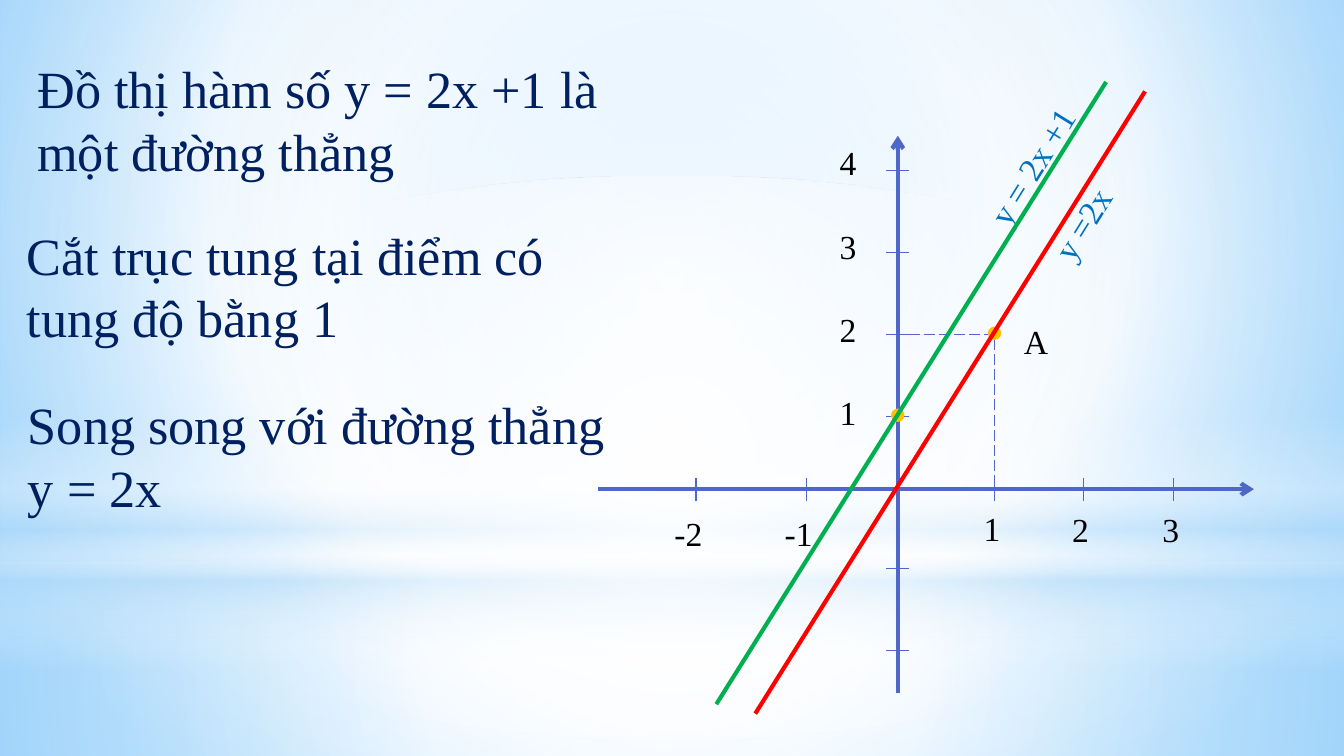
"""Build a slide on the graph of y = 2x + 1 beside its parallel y = 2x."""
from dataclasses import dataclass

from lxml.etree import SubElement
from pptx import Presentation
from pptx.dml.color import RGBColor
from pptx.enum.dml import MSO_LINE_DASH_STYLE as Dash
from pptx.enum.shapes import MSO_CONNECTOR as Connector, MSO_SHAPE as Preset
from pptx.enum.text import MSO_AUTO_SIZE as AutoSize
from pptx.oxml.ns import qn
from pptx.util import Inches, Pt


@dataclass(frozen=True)
class Theme:
    font: str = "Times New Roman"
    statement_size: int = 28
    label_size: int = 18
    navy: str = "002060"
    black: str = "000000"
    blue: str = "0070C0"
    axis: str = "4E67C8"
    point: str = "FFC000"
    red: str = "FF0000"
    green: str = "00B050"
    white: str = "FFFFFF"
    haze: str = "B4DCFA"
    sky: str = "9ED5FF"
    deep_sky: str = "5BB9FF"
    thick: float = 2.25
    thin: float = 0.75


@dataclass(frozen=True)
class Gradient:
    """Stops are (position, colour, opacity), all in percent; no focus means downwards."""
    stops: tuple
    focus: tuple | None = None


@dataclass(frozen=True)
class Layer:
    preset: Preset
    top: float
    height: float
    gradient: Gradient


@dataclass(frozen=True)
class Label:
    text: str
    left: float
    top: float
    width: float
    height: float = 0.43
    color: str = Theme.black
    size: int = Theme.label_size
    rotation: float = 0


@dataclass(frozen=True)
class Segment:
    start: tuple
    end: tuple
    color: str = Theme.axis
    weight: float = Theme.thin
    dashed: bool = False
    arrow: bool = False


THEME = Theme()
PAGE_WIDTH = Inches(10)
PAGE_HEIGHT = PAGE_WIDTH * 9 // 16
CENTER = (50, 50, 50, 50)
ORIGIN_X, ORIGIN_Y = 6.68, 3.64
UNIT_X, UNIT_Y = 7.4, 2.49
TICK = 0.085
BACKDROP = Gradient(((0, THEME.sky, 100), (60, THEME.white, 100), (100, THEME.deep_sky, 100)),
                    (20, 10, 20, 60))
LAYERS = (
    Layer(Preset.RECTANGLE, 4.19, 1.44, Gradient(
        ((0, THEME.white, 91), (37, THEME.white, 76), (100, THEME.haze, 79)), CENTER)),
    Layer(Preset.RECTANGLE, 0, 4.19, Gradient(
        ((0, THEME.white, 89), (48, THEME.white, 62), (100, THEME.haze, 79)), CENTER)),
    Layer(Preset.RECTANGLE, 3.09, 1.88, Gradient(
        ((0, THEME.white, 0), (29, THEME.white, 30), (45, THEME.haze, 40),
         (55, THEME.white, 26), (65, THEME.haze, 60), (100, THEME.white, 0)))),
    Layer(Preset.OVAL, 1.31, 4.19, Gradient(
        ((0, THEME.white, 100), (56, THEME.white, 0)), CENTER)),
)
AXES = (
    Segment((4.45, ORIGIN_Y), (9.33, ORIGIN_Y), weight=THEME.thick, arrow=True),
    Segment((ORIGIN_X, 5.16), (ORIGIN_X, 1.01), weight=THEME.thick, arrow=True),
)
X_TICKS = (5.18, 6, UNIT_X, 8.06, 8.73)
Y_TICKS = (1.27, 1.88, UNIT_Y, 3.1, 4.23, 4.84)
GUIDES = (
    Segment((6.76, UNIT_Y), (UNIT_X, UNIT_Y), dashed=True),
    Segment((UNIT_X, 3.73), (UNIT_X, UNIT_Y), dashed=True),
)
POINTS = ((UNIT_X, 2.48), (ORIGIN_X, 3.09))
X_LABELS = (
    Label("-2", 4.92, 3.77, 0.45), Label("-1", 5.74, 3.77, 0.45),
    Label("1", 7.22, 3.73, 0.36), Label("2", 7.88, 3.74, 0.36), Label("3", 8.55, 3.74, 0.36),
)
Y_LABELS = tuple(Label(str(4 - row), 6.15, 1.01 + 0.62 * row, 0.36) for row in range(4))
CAPTIONS = (
    Label("y =2x", 7.66, 1.46, 0.79, 0.4, THEME.blue, rotation=301.8),
    Label("y = 2x +1", 7.09, 1.03, 1.18, 0.4, THEME.blue, rotation=301.8),
    Label("Đồ thị hàm số y = 2x +1 là\nmột đường thẳng",
          0.18, 0.37, 4.51, 1.04, THEME.navy, THEME.statement_size),
    Label("Song song với đường thẳng\ny = 2x",
          0.11, 2.87, 4.63, 1.04, THEME.navy, THEME.statement_size),
    Label("Cắt trục tung tại điểm có\ntung độ bằng 1",
          0.1, 1.61, 4.19, 1.04, THEME.navy, THEME.statement_size),
    Label("A", 7.52, 2.34, 0.38, 0.4),
)
GRAPHS = (
    Segment((5.62, 5.31), (8.52, 0.68), THEME.red, THEME.thick),
    Segment((5.33, 5.24), (8.23, 0.61), THEME.green, THEME.thick),
)


def paint(owner, fill, gradient: Gradient) -> None:
    fill.gradient()
    node = next(owner.iter(qn("a:gradFill")))
    for child in list(node):
        node.remove(child)
    stops = SubElement(node, qn("a:gsLst"))
    for position, color, opacity in gradient.stops:
        stop = SubElement(stops, qn("a:gs"), pos=str(position * 1000))
        tint = SubElement(stop, qn("a:srgbClr"), val=color)
        if opacity < 100:
            SubElement(tint, qn("a:alpha"), val=str(opacity * 1000))
    if gradient.focus:
        circle = SubElement(node, qn("a:path"), path="circle")
        sides = {side: str(share * 1000) for side, share in zip("ltrb", gradient.focus)}
        SubElement(circle, qn("a:fillToRect"), **sides)
    else:
        SubElement(node, qn("a:lin"), ang="5400000", scaled="0")


def draw_layer(page, layer: Layer) -> None:
    shape = page.shapes.add_shape(layer.preset, 0, Inches(layer.top),
                                  PAGE_WIDTH, Inches(layer.height))
    shape.shadow.inherit = False
    shape.line.fill.background()
    paint(shape.element, shape.fill, layer.gradient)


def draw_segment(page, segment: Segment) -> None:
    ends = [Inches(length) for length in (*segment.start, *segment.end)]
    connector = page.shapes.add_connector(Connector.STRAIGHT, *ends)
    line = connector.line
    line.color.rgb = RGBColor.from_string(segment.color)
    line.width = Pt(segment.weight)
    if segment.dashed:
        line.dash_style = Dash.LONG_DASH
    if segment.arrow:
        SubElement(connector.element.spPr.find(qn("a:ln")), qn("a:tailEnd"), type="arrow")
    SubElement(connector.element.spPr, qn("a:effectLst"))


def draw_point(page, center_x: float, center_y: float) -> None:
    dot = page.shapes.add_shape(Preset.FLOWCHART_CONNECTOR, Inches(center_x - 0.05),
                                Inches(center_y - 0.05), Inches(0.1), Inches(0.1))
    dot.shadow.inherit = False
    dot.fill.solid()
    dot.fill.fore_color.rgb = RGBColor.from_string(THEME.point)
    dot.line.fill.background()


def draw_label(page, label: Label) -> None:
    box = page.shapes.add_textbox(Inches(label.left), Inches(label.top),
                                  Inches(label.width), Inches(label.height))
    box.rotation = label.rotation
    frame = box.text_frame
    frame.word_wrap = False
    frame.auto_size = AutoSize.SHAPE_TO_FIT_TEXT
    frame.text = label.text
    for para in frame.paragraphs:
        for span in para.runs:
            span.font.name = THEME.font
            span.font.size = Pt(label.size)
            span.font.color.rgb = RGBColor.from_string(label.color)


def main() -> None:
    deck = Presentation()
    deck.slide_width, deck.slide_height = PAGE_WIDTH, PAGE_HEIGHT
    page = deck.slides.add_slide(deck.slide_layouts[6])
    paint(page.element, page.background.fill, BACKDROP)
    for layer in LAYERS:
        draw_layer(page, layer)
    x_marks = [Segment((x, ORIGIN_Y - TICK), (x, ORIGIN_Y + TICK)) for x in X_TICKS]
    y_marks = [Segment((ORIGIN_X + TICK, y), (ORIGIN_X - TICK, y)) for y in Y_TICKS]
    for segment in (*AXES, *x_marks, *y_marks, *GUIDES):
        draw_segment(page, segment)
    for center in POINTS:
        draw_point(page, *center)
    for label in (*X_LABELS, *Y_LABELS, *CAPTIONS):
        draw_label(page, label)
    for graph in GRAPHS:
        draw_segment(page, graph)
    deck.save("out.pptx")


if __name__ == "__main__":
    main()
